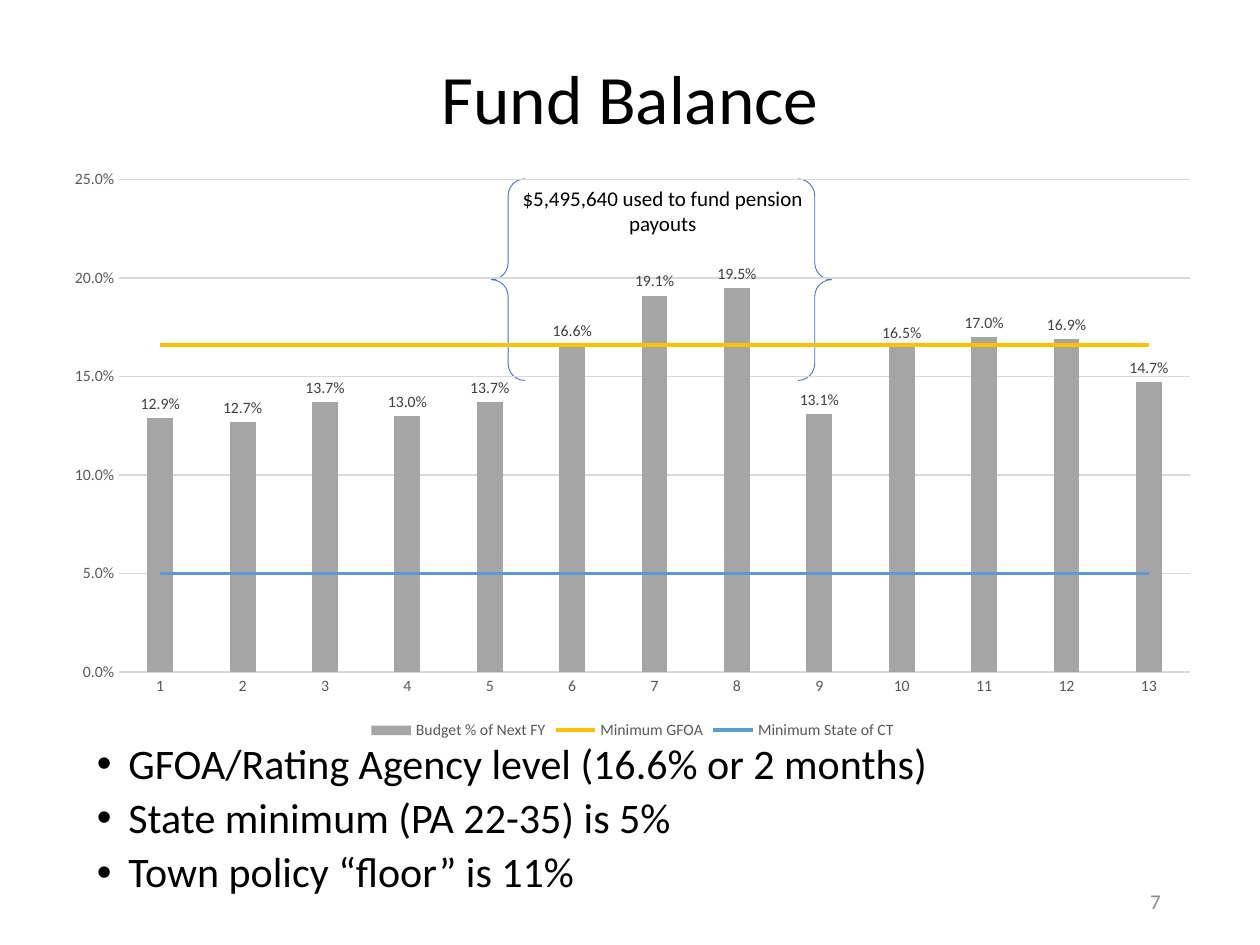
"""Build the Fund Balance slide: a column and line chart with notes."""
from lxml import etree
from pptx import Presentation
from pptx.chart.data import CategoryChartData
from pptx.dml.color import RGBColor
from pptx.enum.chart import XL_CHART_TYPE, XL_LABEL_POSITION, XL_LEGEND_POSITION, XL_MARKER_STYLE, XL_TICK_MARK
from pptx.enum.shapes import MSO_SHAPE
from pptx.enum.text import MSO_ANCHOR, PP_ALIGN
from pptx.oxml import parse_xml
from pptx.oxml.ns import nsdecls, qn
from pptx.util import Inches, Pt

COLUMNS = XL_CHART_TYPE.COLUMN_CLUSTERED
NO_TICKS = XL_TICK_MARK.NONE
NO_MARKER = XL_MARKER_STYLE.NONE
LABELS_ABOVE = XL_LABEL_POSITION.OUTSIDE_END
LEGEND_BELOW = XL_LEGEND_POSITION.BOTTOM
DOUBLE_BRACE = MSO_SHAPE.DOUBLE_BRACE
LEFT, CENTER, RIGHT = PP_ALIGN.LEFT, PP_ALIGN.CENTER, PP_ALIGN.RIGHT
TOP, MIDDLE = MSO_ANCHOR.TOP, MSO_ANCHOR.MIDDLE
FONT = "Calibri"
GRAY, GRID, PERCENT = "595959", "D9D9D9", "0.0%"

TITLE = "Fund Balance"
POINTS = [
    "GFOA/Rating Agency level (16.6% or 2 months)",
    "State minimum (PA 22-35) is 5%",
    "Town policy “floor” is 11%",
]
CALLOUT = "$5,495,640 used to fund pension payouts"
PAGE_NUMBER = "7"
BALANCES = [0.129, 0.127, 0.137, 0.13, 0.137, 0.166, 0.191,
            0.195, 0.131, 0.165, 0.17, 0.169, 0.147]
BAR_NAME, BAR_COLOR = "Budget % of Next FY", "A5A5A5"
MINIMUMS = [("Minimum GFOA", 0.166, "FFC000"), ("Minimum State of CT", 0.05, "5B9BD5")]


def rgb(value):
    return RGBColor.from_string(value)


def style_font(font, size, color):
    font.name, font.size = FONT, Pt(size)
    font.color.rgb = rgb(color)


def style_line(line, color, width):
    line.color.rgb = rgb(color)
    line.width = Pt(width)


def add_text(slide, box, lines, size, color="000000", align=LEFT, anchor=TOP,
             spacing=1.0, before=0, bullet=False):
    frame = slide.shapes.add_textbox(*map(Inches, box)).text_frame
    frame.word_wrap = True
    frame.vertical_anchor = anchor
    for index, line in enumerate(lines):
        paragraph = frame.paragraphs[0] if index == 0 else frame.add_paragraph()
        paragraph.alignment = align
        paragraph.line_spacing = spacing
        if index:
            paragraph.space_before = Pt(before)
        if bullet:
            properties = paragraph._p.get_or_add_pPr()
            properties.set("marL", str(Inches(0.75)))
            properties.set("indent", str(Inches(-0.25)))
            properties.append(parse_xml(f'<a:buFont {nsdecls("a")} typeface="Arial"/>'))
            properties.append(parse_xml(f'<a:buChar {nsdecls("a")} char="•"/>'))
        run = paragraph.add_run()
        run.text = line
        style_font(run.font, size, color)


def move_minimums_to_lines(chart):
    bar_plot = chart.plots[0]._element
    line_plot = parse_xml(
        f'<c:lineChart {nsdecls("c")}><c:grouping val="standard"/><c:varyColors val="0"/></c:lineChart>')
    for series in bar_plot.findall(qn("c:ser"))[1:]:
        for setting in series.findall(qn("c:invertIfNegative")):
            series.remove(setting)
        line_plot.append(series)
    etree.SubElement(line_plot, qn("c:marker")).set("val", "1")
    for axis in bar_plot.findall(qn("c:axId")):
        etree.SubElement(line_plot, qn("c:axId")).set("val", axis.get("val"))
    bar_plot.addnext(line_plot)


def clear_backgrounds(chart):
    empty = f'<c:spPr {nsdecls("c", "a")}><a:noFill/><a:ln><a:noFill/></a:ln></c:spPr>'
    chart_part = chart._chartSpace.find(qn("c:chart"))
    chart_part.find(qn("c:plotArea")).append(parse_xml(empty))
    chart_part.addnext(parse_xml(empty))


def add_balance_chart(slide, box):
    data = CategoryChartData(number_format=PERCENT)
    data.categories = [str(year) for year in range(1, len(BALANCES) + 1)]
    data.add_series(BAR_NAME, BALANCES)
    for name, level, _ in MINIMUMS:
        data.add_series(name, [level] * len(BALANCES))
    chart = slide.shapes.add_chart(COLUMNS, *map(Inches, box), data).chart
    style_font(chart.font, 10, "000000")
    chart.has_title = False
    chart.has_legend = True
    chart.legend.position = LEGEND_BELOW
    chart.legend.include_in_layout = False
    style_font(chart.legend.font, 9, GRAY)

    move_minimums_to_lines(chart)
    clear_backgrounds(chart)
    bars, lines = chart.plots
    bars.vary_by_categories = False
    bars.gap_width, bars.overlap = 219, -27
    bar_series = bars.series[0]
    bar_series.format.fill.solid()
    bar_series.format.fill.fore_color.rgb = rgb(BAR_COLOR)
    labels = bar_series.data_labels
    labels.show_value = True
    labels.number_format, labels.number_format_is_linked = PERCENT, False
    labels.position = LABELS_ABOVE
    style_font(labels.font, 9, "404040")
    for series, (_, _, color) in zip(lines.series, MINIMUMS):
        style_line(series.format.line, color, 2.25)
        series.marker.style = NO_MARKER
        series.smooth = False

    values, categories = chart.value_axis, chart.category_axis
    for axis in (values, categories):
        axis.major_tick_mark = axis.minor_tick_mark = NO_TICKS
        style_font(axis.tick_labels.font, 9, GRAY)
    style_line(categories.format.line, GRID, 0.75)
    values.format.line.fill.background()
    style_line(values.major_gridlines.format.line, GRID, 0.75)
    values.minimum_scale, values.maximum_scale, values.major_unit = 0, 0.25, 0.05
    values.tick_labels.number_format = PERCENT
    values.tick_labels.number_format_is_linked = False


def main():
    presentation = Presentation()
    presentation.slide_width, presentation.slide_height = Inches(10), Inches(7.5)
    slide = presentation.slides.add_slide(presentation.slide_layouts[6])
    add_text(slide, (0.69, 0.5, 8.62, 0.62), [TITLE], 39.6, align=CENTER, anchor=MIDDLE, spacing=0.9)
    add_text(slide, (0.17, 5.85, 9.69, 1.38), POINTS, 24, spacing=0.9, before=5, bullet=True)
    add_text(slide, (7.06, 6.95, 2.25, 0.4), [PAGE_NUMBER], 12, color="8C8C8C", align=RIGHT, anchor=MIDDLE)
    braces = slide.shapes.add_shape(DOUBLE_BRACE, *map(Inches, (3.9, 1.42, 2.7, 1.6)))
    braces.shadow.inherit = False
    braces.fill.background()
    style_line(braces.line, "4472C4", 0.5)
    add_text(slide, (4.03, 1.42, 2.46, 0.5), [CALLOUT], 12, align=CENTER)
    add_balance_chart(slide, (0.41, 1.26, 9.22, 4.65))
    presentation.save("out.pptx")


if __name__ == "__main__":
    main()
